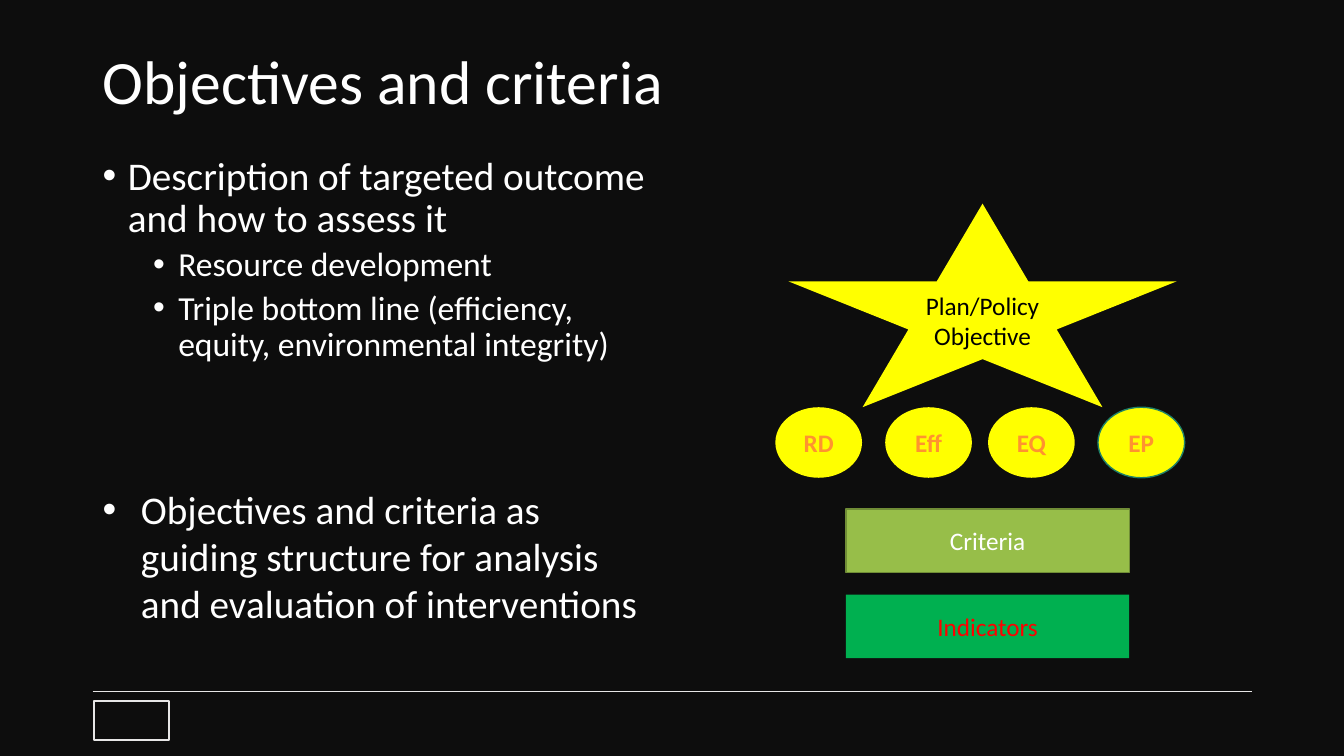
"""Build the slide on objectives and criteria."""
from dataclasses import dataclass
from typing import Optional

from lxml import etree
from pptx import Presentation
from pptx import slide as s
from pptx import util as u
from pptx.dml import color
from pptx.enum import shapes, text
from pptx.oxml import ns
from pptx.shapes import autoshape
from pptx.text import text as t

SCALE = 9144


@dataclass(frozen=True)
class Theme:
    font: str = "Calibri"
    background: str = "0D0D0D"
    light: str = "FFFFFF"
    dark: str = "000000"
    rule: str = "E7E6E6"
    yellow: str = "FFFF00"
    orange: str = "FF932F"
    olive: str = "97BE49"
    olive_edge: str = "708D36"
    green: str = "00B050"
    red: str = "FF0000"
    teal: str = "1E8168"
    title_size: int = 44
    body_size: int = 28
    detail_size: int = 24
    label_size: int = 18


THEME = Theme()


@dataclass(frozen=True)
class Node:
    kind: shapes.MSO_SHAPE
    left: int
    top: int
    width: int
    height: int
    lines: tuple[str, ...] = ()
    fill: Optional[str] = None
    ink: str = THEME.light
    edge: Optional[str] = None
    edge_width: float = 1
    bold: bool = False


@dataclass(frozen=True)
class Bullet:
    words: str
    size: int = THEME.body_size
    level: int = 0
    indent: int = 25
    hanging: int = 25
    before: float = 0
    spacing: float = 0.9


def px(length: int) -> u.Emu:
    """Turn px into EMU."""
    return u.Emu(length * SCALE)


def rgb(value: str) -> color.RGBColor:
    """Turn a hex string into a colour."""
    return color.RGBColor.from_string(value)


def style(para: t._Paragraph, size: int, ink: str, bold: bool = False) -> None:
    """Set the font of a whole paragraph."""
    font = para.font
    font.name, font.size, font.bold = THEME.font, u.Pt(size), bold
    font.color.rgb = rgb(ink)


def add_node(page: s.Slide, node: Node) -> autoshape.Shape:
    """Draw a preset shape with its centred label."""
    box = page.shapes.add_shape(
        node.kind, px(node.left), px(node.top), px(node.width), px(node.height))
    box.shadow.inherit = False
    if node.fill:
        box.fill.solid()
        box.fill.fore_color.rgb = rgb(node.fill)
    else:
        box.fill.background()
    if node.edge:
        box.line.color.rgb = rgb(node.edge)
        box.line.width = u.Pt(node.edge_width)
    else:
        box.line.fill.background()
    frame = box.text_frame
    frame.word_wrap = False
    frame.vertical_anchor = text.MSO_ANCHOR.MIDDLE
    for index, line in enumerate(node.lines):
        para = frame.add_paragraph() if index else frame.paragraphs[0]
        para.text = line
        para.alignment = text.PP_ALIGN.CENTER
        style(para, THEME.label_size, node.ink, node.bold)
    return box


def add_text_box(page: s.Slide, left: int, top: int, width: int, height: int) -> t.TextFrame:
    """Add a wrapping text box and return its frame."""
    frame = page.shapes.add_textbox(px(left), px(top), px(width), px(height)).text_frame
    frame.word_wrap = True
    return frame


def add_title(page: s.Slide, words: str) -> None:
    """Write the slide title."""
    frame = add_text_box(page, 92, 40, 1150, 87)
    frame.vertical_anchor = text.MSO_ANCHOR.MIDDLE
    para = frame.paragraphs[0]
    para.text = words
    para.line_spacing = 0.9
    style(para, THEME.title_size, THEME.light)


def add_bullets(page: s.Slide, bullets: tuple[Bullet, ...]) -> None:
    """Write the bulleted body text."""
    frame = add_text_box(page, 92, 150, 567, 512)
    for index, bullet in enumerate(bullets):
        para = frame.add_paragraph() if index else frame.paragraphs[0]
        para.text = bullet.words
        para.level = bullet.level
        para.line_spacing = bullet.spacing
        para.space_before = u.Pt(bullet.before)
        props = para._p.get_or_add_pPr()
        props.set("marL", str(px(bullet.indent)))
        props.set("indent", str(px(-bullet.hanging)))
        etree.SubElement(props, ns.qn("a:buFont")).set("typeface", "Arial")
        etree.SubElement(props, ns.qn("a:buChar")).set("char", "•")
        style(para, bullet.size, THEME.light)


def add_rule(page: s.Slide, left: int, right: int, top: int) -> None:
    """Draw the footer line."""
    rule = page.shapes.add_connector(
        shapes.MSO_CONNECTOR.STRAIGHT, px(left), px(top), px(right), px(top))
    rule.line.color.rgb = rgb(THEME.rule)
    rule.line.width = u.Pt(1)
    etree.SubElement(rule._element.spPr, ns.qn("a:effectLst"))


BULLETS = (
    Bullet("Description of targeted outcome and how to assess it"),
    Bullet("Resource development", THEME.detail_size, 1, 75, before=5),
    Bullet("Triple bottom line (efficiency, equity, environmental integrity)",
           THEME.detail_size, 1, 75, before=5),
    Bullet("Objectives and criteria as guiding structure for analysis and "
           "evaluation of interventions", indent=38, hanging=38, before=87, spacing=1),
)
KIND = shapes.MSO_SHAPE
CRITERIA = (("RD", 769, None), ("Eff", 878, None), ("EQ", 980, None), ("EP", 1089, THEME.teal))
NODES = (
    Node(KIND.RECTANGLE, 93, 695, 75, 39, edge=THEME.rule, edge_width=1.5),
    Node(KIND.STAR_5_POINT, 782, 202, 385, 202, ("Plan/Policy", "Objective"),
         THEME.yellow, THEME.dark),
    Node(KIND.RECTANGLE, 839, 505, 281, 63, ("Criteria",), THEME.olive, edge=THEME.olive_edge),
    Node(KIND.RECTANGLE, 839, 590, 281, 63, ("Indicators",), THEME.green, THEME.red),
    *(Node(KIND.OVAL, left, 404, 86, 70, (label,), THEME.yellow, THEME.orange, edge, bold=True)
      for label, left, edge in CRITERIA),
)


def main() -> None:
    """Build and save the deck."""
    deck = Presentation()
    deck.slide_width, deck.slide_height = px(1333), px(750)
    page = deck.slides.add_slide(deck.slide_layouts[6])
    page.background.fill.solid()
    page.background.fill.fore_color.rgb = rgb(THEME.background)
    add_rule(page, 92, 1242, 686)
    add_title(page, "Objectives and criteria")
    add_bullets(page, BULLETS)
    for node in NODES:
        add_node(page, node)
    deck.save("out.pptx")


if __name__ == "__main__":
    main()
